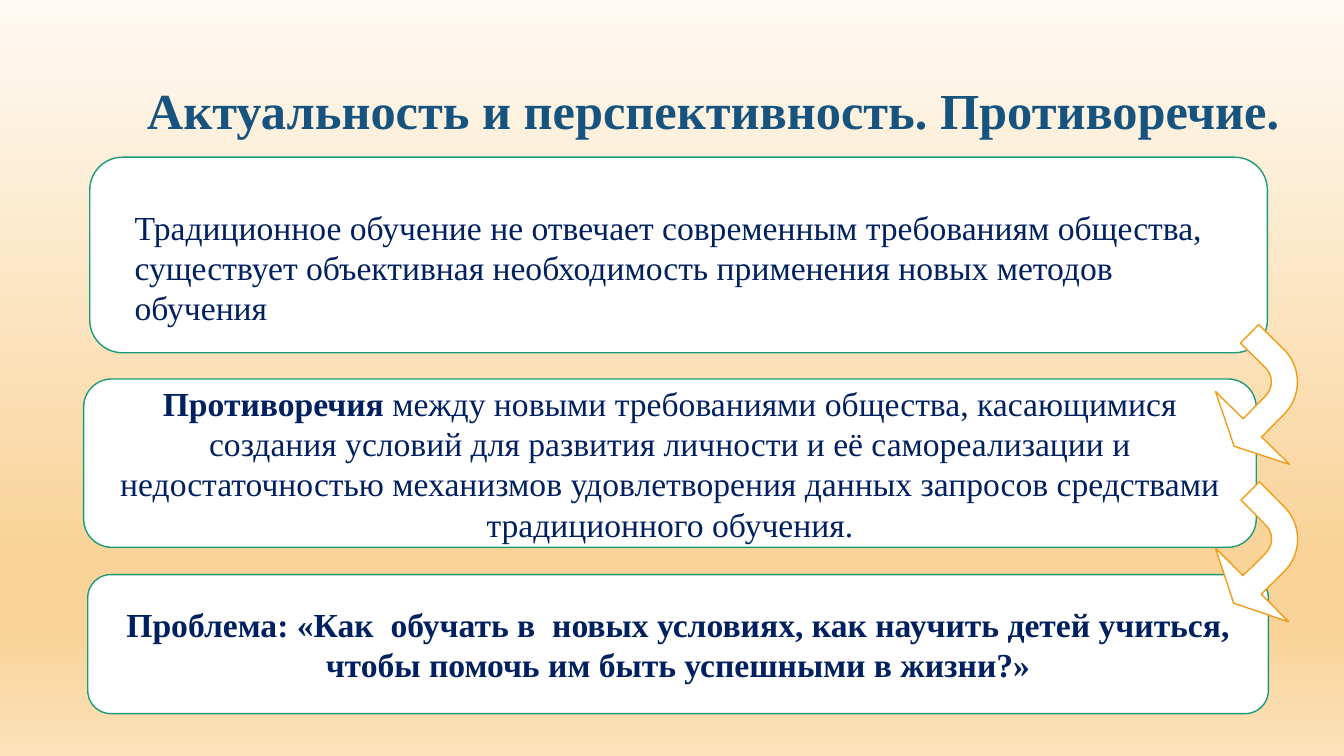
from lxml import etree
from pptx import Presentation
from pptx import util as u
from pptx.dml.color import RGBColor
from pptx.enum import shapes, text
from pptx.oxml.ns import qn

FONT = "Times New Roman"
NAVY, TITLE_BLUE, WHITE = "002060", "16537F", "FFFFFF"
GREEN, ORANGE = "1D9A78", "F19D19"
BACKGROUND_STOPS = [(0, "FEFAF3"), (74, "F9D398"), (83, "F9D398"), (100, "FBE2BA")]

# Each card: box, alignment, extra top margin and left indent, spans (wording, bold)
CARDS = [
    ((0.83, 3.76, 11.63, 1.67), text.PP_ALIGN.CENTER, 0, 0, [
        ("Противоречия ", True),
        ("между новыми требованиями общества, касающимися создания условий "
         "для развития личности и её самореализации и недостаточностью "
         "механизмов удовлетворения данных запросов средствами "
         "традиционного обучения.", False)]),
    ((0.89, 1.56, 11.68, 1.94), text.PP_ALIGN.LEFT, 0.24, 0.25, [
        ("Традиционное обучение не отвечает современным требованиям общества, "
         "существует объективная необходимость применения новых методов "
         "обучения", False)]),
    ((0.87, 5.7, 11.71, 1.38), text.PP_ALIGN.CENTER, 0, 0, [
        ("Проблема: «Как  обучать в  новых условиях, как научить детей "
         "учиться, чтобы помочь им быть успешными в жизни?»", True)]),
]
ARROWS = [((12.03, 3.41, 1.03, 1.19), 134.6), ((12.03, 4.97, 1.03, 1.19), 135.2)]


def color(value):
    return RGBColor.from_string(value)


def inches(box):
    return [u.Inches(length) for length in box]


def set_font(font, size, value):
    font.name = FONT
    font.size = u.Pt(size)
    font.color.rgb = color(value)


def paint_background(page):
    fill = page.background.fill
    fill.gradient()
    fill.gradient_angle = 270
    stops = page.element.find(".//" + qn("a:gsLst"))
    for stop in list(stops):
        stops.remove(stop)
    for percent, value in BACKGROUND_STOPS:
        stop = etree.SubElement(stops, qn("a:gs"), pos=str(percent * 1000))
        etree.SubElement(stop, qn("a:srgbClr"), val=value)


def add_title(page, box, wording):
    frame = page.shapes.add_textbox(*inches(box)).text_frame
    frame.word_wrap = True
    frame.vertical_anchor = text.MSO_ANCHOR.MIDDLE
    para = frame.paragraphs[0]
    para.text = wording
    para.alignment = text.PP_ALIGN.CENTER
    para.line_spacing = 0.9
    set_font(para.font, 36, TITLE_BLUE)
    para.font.bold = True


def add_outlined(page, kind, box, line_color):
    shape = page.shapes.add_shape(kind, *inches(box))
    shape.shadow.inherit = False
    shape.fill.solid()
    shape.fill.fore_color.rgb = color(WHITE)
    shape.line.color.rgb = color(line_color)
    shape.line.width = u.Pt(1)
    return shape


def add_card(page, box, alignment, extra_top, indent, spans):
    card = add_outlined(page, shapes.MSO_SHAPE.ROUNDED_RECTANGLE, box, GREEN)
    frame = card.text_frame
    frame.word_wrap = True
    frame.vertical_anchor = text.MSO_ANCHOR.MIDDLE
    frame.margin_top = u.Inches(0.05 + extra_top)
    frame.margin_left = u.Inches(0.1 + indent)
    para = frame.paragraphs[0]
    para.alignment = alignment
    set_font(para.font, 24, NAVY)
    for wording, bold in spans:
        span = para.add_run()
        span.text = wording
        span.font.bold = bold
        set_font(span.font, 24, NAVY)


def add_arrow(page, box, rotation):
    arrow = add_outlined(page, shapes.MSO_SHAPE.BENT_ARROW, box, ORANGE)
    arrow.rotation = rotation
    for index, value in enumerate((0.25, 0.5, 0.25, 0.44)):
        arrow.adjustments[index] = value


def main():
    deck = Presentation()
    deck.slide_width, deck.slide_height = u.Inches(13.33), u.Inches(7.5)
    page = deck.slides.add_slide(deck.slide_layouts[6])
    paint_background(page)
    add_title(page, (0.92, 0.4, 12.31, 1.45),
              "Актуальность и перспективность. Противоречие.")
    # Statements, then the arrows leading from one to the next
    for card in CARDS:
        add_card(page, *card)
    for box, rotation in ARROWS:
        add_arrow(page, box, rotation)
    deck.save("out.pptx")


if __name__ == "__main__":
    main()
